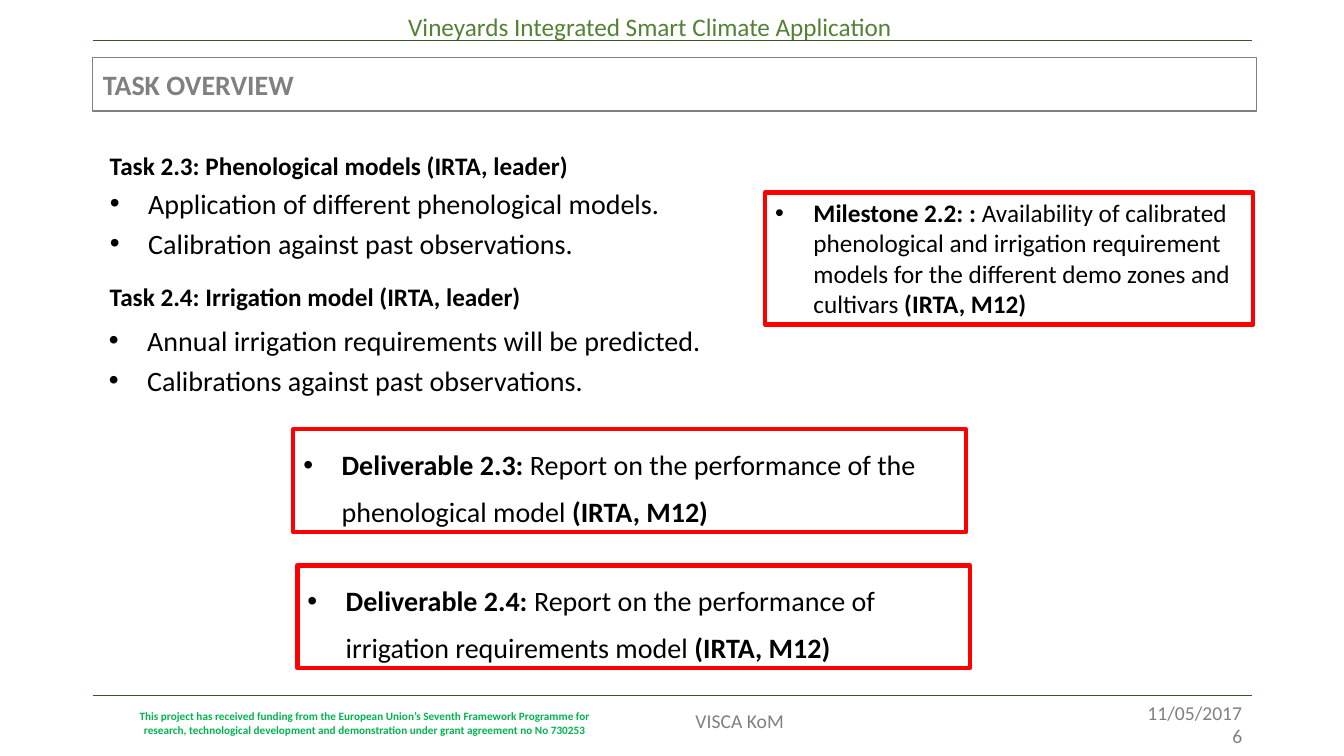
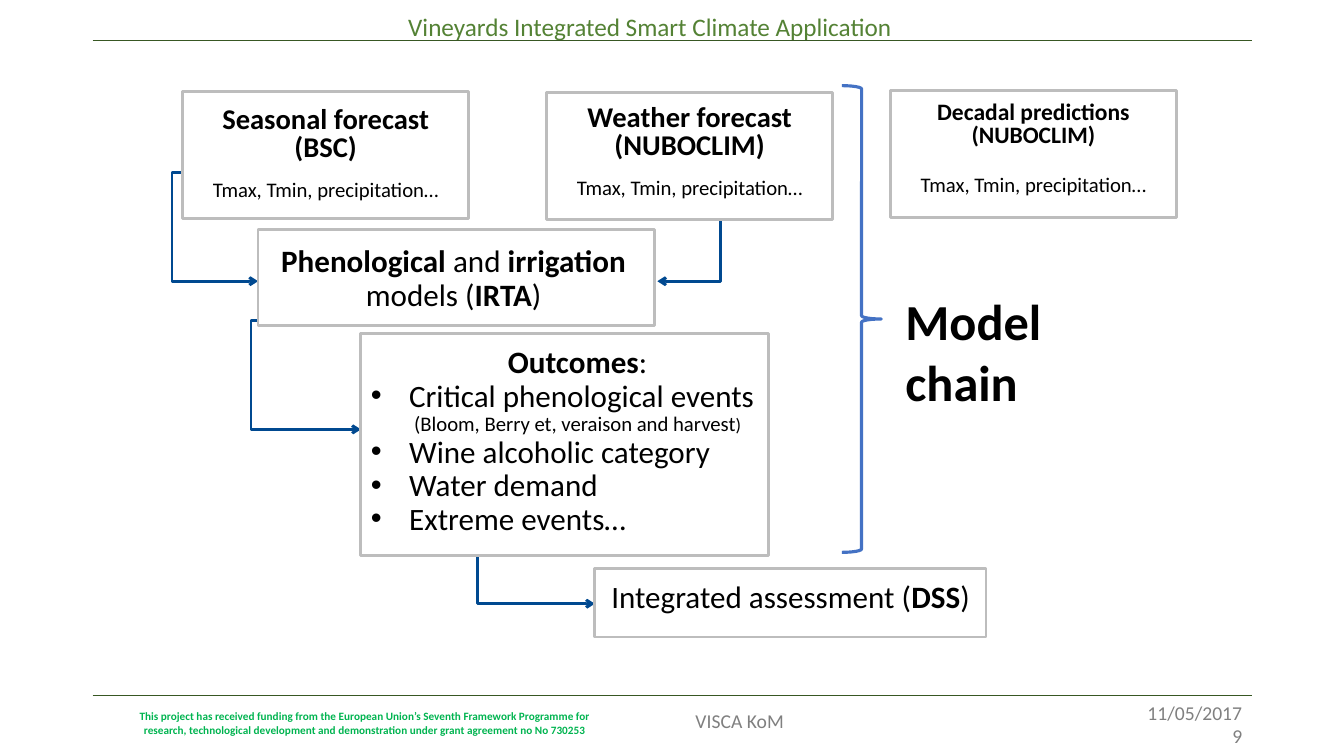
from dataclasses import dataclass
from typing import NamedTuple

from lxml import etree
from pptx import Presentation
from pptx.dml import color
from pptx.enum import shapes, text
from pptx.oxml import ns
from pptx.util import Inches, Pt

FONT = "Calibri"
BLACK, WHITE, GREY = "000000", "FFFFFF", "808080"
HEADER_GREEN, RULE_GREEN, FUNDING_GREEN = "548235", "385723", "00B450"
RED, BOX_GREY, ARROW_BLUE, BRACE_BLUE = "FF0000", "BDBDBD", "004990", "4472C4"
LEFT, CENTER, RIGHT = text.PP_ALIGN.LEFT, text.PP_ALIGN.CENTER, text.PP_ALIGN.RIGHT
TOP, MIDDLE = text.MSO_ANCHOR.TOP, text.MSO_ANCHOR.MIDDLE
HANGING = 0.38


class Area(NamedTuple):
    left: float
    top: float
    width: float
    height: float


class Insets(NamedTuple):
    left: float = 0.1
    top: float = 0.05
    right: float = 0.1
    bottom: float = 0.05


class Run(NamedTuple):
    words: str
    bold: bool = False
    size: float | None = None


@dataclass(frozen=True)
class Line:
    runs: tuple[Run, ...]
    size: float
    hex_color: str = BLACK
    align: text.PP_ALIGN = LEFT
    spacing: float = 1.0
    before: float = 0
    bullet: bool = False
    indent: float = 0


@dataclass(frozen=True)
class Box:
    area: Area
    lines: tuple[Line, ...]
    insets: Insets = Insets()


class Elbow(NamedTuple):
    begin: tuple[float, float]
    end: tuple[float, float]
    bend: float = 0.5


def rgb(hex_color: str) -> color.RGBColor:
    return color.RGBColor.from_string(hex_color)


def place(shape, area: Area) -> None:
    shape.left, shape.top, shape.width, shape.height = map(Inches, area)


def write(shape, lines: tuple[Line, ...], insets: Insets = Insets(), anchor=TOP) -> None:
    frame = shape.text_frame
    frame.word_wrap = True
    frame.auto_size = text.MSO_AUTO_SIZE.NONE
    frame.vertical_anchor = anchor
    frame.margin_left, frame.margin_top, frame.margin_right, frame.margin_bottom = map(Inches, insets)
    for index, line in enumerate(lines):
        paragraph = frame.add_paragraph() if index else frame.paragraphs[0]
        properties = paragraph._p.get_or_add_pPr()
        properties.set("marL", str(Inches(HANGING if line.bullet else line.indent)))
        properties.set("indent", str(-Inches(HANGING) if line.bullet else 0))
        if line.bullet:
            etree.SubElement(properties, ns.qn("a:buFont")).set("typeface", "Arial")
            etree.SubElement(properties, ns.qn("a:buChar")).set("char", "•")
        else:
            etree.SubElement(properties, ns.qn("a:buNone"))
        paragraph.alignment = line.align
        paragraph.line_spacing = line.spacing
        paragraph.space_before = Pt(line.before)
        for part in line.runs:
            run = paragraph.add_run()
            run.text = part.words
            run.font.name = FONT
            run.font.size = Pt(part.size or line.size)
            run.font.bold = part.bold
            run.font.color.rgb = rgb(line.hex_color)


def add_label(slide, area: Area, *lines: Line, insets: Insets = Insets()):
    label = slide.shapes.add_textbox(*map(Inches, area))
    write(label, lines, insets)
    return label


def add_box(slide, box: Box, outline: str, weight: float, fill: str | None = None) -> None:
    shape = slide.shapes.add_shape(shapes.MSO_SHAPE.RECTANGLE, *map(Inches, box.area))
    shape.shadow.inherit = False
    if fill:
        shape.fill.solid()
        shape.fill.fore_color.rgb = rgb(fill)
    else:
        shape.fill.background()
    shape.line.color.rgb = rgb(outline)
    shape.line.width = Pt(weight)
    write(shape, box.lines, box.insets)


def add_connector(slide, kind, begin, end, hex_color: str, weight: float):
    connector = slide.shapes.add_connector(kind, *map(Inches, (*begin, *end)))
    connector.line.color.rgb = rgb(hex_color)
    connector.line.width = Pt(weight)
    etree.SubElement(connector.element.spPr, ns.qn("a:effectLst"))
    return connector


def add_elbow_arrow(slide, elbow: Elbow) -> None:
    connector = add_connector(
        slide, shapes.MSO_CONNECTOR.ELBOW, elbow.begin, elbow.end, ARROW_BLUE, 2)
    properties = connector.element.spPr
    etree.SubElement(properties.find(ns.qn("a:ln")), ns.qn("a:tailEnd")).set("type", "arrow")
    geometry = properties.find(ns.qn("a:prstGeom"))
    guides = geometry.find(ns.qn("a:avLst"))
    if guides is None:
        guides = etree.SubElement(geometry, ns.qn("a:avLst"))
    guide = etree.SubElement(guides, ns.qn("a:gd"))
    guide.set("name", "adj1")
    guide.set("fmla", f"val {round(elbow.bend * 100000)}")


def furnish_master(presentation, slide) -> None:
    funding = (
        "This project has received funding from the European Union’s Seventh Framework Programme "
        "for research, technological development and demonstration under grant agreement no No 730253")
    furniture = [
        add_label(slide, Area(1.27, 6.98, 4.7, 0.34),
                  Line((Run(funding, True),), 8, FUNDING_GREEN, CENTER),
                  insets=Insets(0.11, 0.06, 0.11, 0.06)),
        add_label(slide, Area(6.8, 6.98, 1.2, 0.34), Line((Run("VISCA KoM"),), 14, GREY)),
        add_label(slide, Area(3.95, 0.06, 5.11, 0.4),
                  Line((Run("Vineyards Integrated Smart Climate Application"),), 18, HEADER_GREEN)),
    ]
    for height in (0.4, 6.9):
        furniture.append(add_connector(
            slide, shapes.MSO_CONNECTOR.STRAIGHT, (0.92, height), (12.42, height), RULE_GREEN, 0.5))
    for shape in furniture:
        presentation.slide_master.shapes.element.append(shape.element)


def add_page_mark(slide, number: int) -> None:
    add_label(slide, Area(10.67, 6.9, 1.75, 0.57),
              *(Line((Run(words),), 14, GREY, RIGHT) for words in ("11/05/2017", str(number))))


def report(area: Area, name: str, words: str, size: float, spacing: float) -> Box:
    runs = (Run(name, True), Run(words), Run("(IRTA, M12)", True))
    return Box(area, (Line(runs, size, spacing=spacing, bullet=True),))


def build_tasks(slide) -> None:
    title, *lists = slide.placeholders
    place(title, Area(0.92, 0.57, 11.54, 0.53))
    title.line.color.rgb = rgb(GREY)
    title.line.width = Pt(1)
    write(title, (Line((Run("TASK OVERVIEW", True),), 20, GREY),), anchor=MIDDLE)

    tasks = (
        ("Task 2.3: Phenological models (IRTA, leader)", 1.44, Area(0.99, 1.73, 6.5, 1),
         ("Application of different phenological models.", "Calibration against past observations.")),
        ("Task 2.4: Irrigation model (IRTA, leader)", 2.74, Area(0.98, 3.09, 6.5, 1),
         ("Annual irrigation requirements will be predicted.", "Calibrations against past observations.")),
    )
    for body, (heading, top, area, points) in zip(lists, tasks):
        add_label(slide, Area(0.99, top, 6.5, 0.4), Line((Run(heading, True),), 18))
        place(body, area)
        write(body, tuple(Line((Run(point),), 20, spacing=1.2, bullet=True) for point in points))

    for box in (
        report(Area(7.59, 1.91, 4.84, 1.31), "Milestone 2.2: : ",
               "Availability of calibrated phenological and irrigation requirement models "
               "for the different demo zones and cultivars ", 18, 1),
        report(Area(2.91, 4.26, 6.67, 1.02), "Deliverable 2.3: ",
               "Report on the performance of the phenological model ", 20, 1.4),
        report(Area(2.95, 5.61, 6.67, 1.02), "Deliverable 2.4: ",
               "Report on the performance of irrigation requirements model ", 20, 1.4),
    ):
        add_box(slide, box, RED, 3)


def forecast(left: float, top: float, name: str, owner: str, size: float,
             inset: float, gap: float) -> Box:
    heading = tuple(
        Line((Run(words, True),), size, align=CENTER, spacing=0.8) for words in (name, owner))
    variables = Line((Run("Tmax, Tmin, precipitation…"),), 14.8,
                     align=CENTER, spacing=0.9, before=gap)
    return Box(Area(left, top, 2.84, 1.26), (*heading, variables), Insets(top=inset))


def step(*runs: Run, **options) -> Line:
    return Line(runs, 22.2, spacing=0.9, **options)


def build_model_chain(slide) -> None:
    title = slide.shapes.title
    place(title, Area(8.88, 2.83, 2.1, 1.32))
    write(title, (Line((Run("Model chain", True),), 36),))

    for elbow in (
        Elbow((7.78, 1.98), (6.52, 2.79)),
        Elbow((3.58, 5.25), (5.9, 5.99)),
        Elbow((1.81, 1.71), (2.56, 2.79), -0.14),
        Elbow((2.56, 3.18), (3.58, 4.26), -0.07),
    ):
        add_elbow_arrow(slide, elbow)

    outcomes = (
        step(Run("Outcomes", True), Run(":"), align=CENTER, indent=0.21),
        step(Run("Critical phenological events"), bullet=True),
        step(Run("(Bloom, Berry et, veraison and harvest", size=14.8), Run(")", size=12.9),
             align=CENTER, indent=0.21),
        *(step(Run(words), bullet=True)
          for words in ("Wine alcoholic category", "Water demand", "Extreme events…")),
    )
    for box in (
        forecast(1.81, 0.91, "Seasonal forecast", "(BSC)", 20.4, 0.16, 12),
        forecast(5.42, 0.92, "Weather forecast", "(NUBOCLIM)", 20.4, 0.13, 12),
        forecast(8.83, 0.9, "Decadal predictions", "(NUBOCLIM)", 16.8, 0.12, 19),
        Box(Area(2.56, 2.28, 3.93, 0.95),
            (step(Run("Phenological", True), Run(" and "), Run("irrigation", True),
                  Run(" models ("), Run("IRTA", True), Run(")"), align=CENTER),),
            Insets(top=0.16, right=0.15)),
        Box(Area(3.58, 3.31, 4.04, 2.2), outcomes, Insets(top=0.13, right=0.05)),
        Box(Area(5.9, 5.64, 3.88, 0.68),
            (step(Run("Integrated assessment ("), Run("DSS", True), Run(")"), align=CENTER),),
            Insets(top=0.13)),
    ):
        add_box(slide, box, BOX_GREY, 2, WHITE)

    brace = slide.shapes.add_shape(
        shapes.MSO_SHAPE.RIGHT_BRACE, *map(Inches, Area(8.35, 0.85, 0.39, 4.63)))
    brace.shadow.inherit = False
    brace.fill.background()
    brace.line.color.rgb = rgb(BRACE_BLUE)
    brace.line.width = Pt(2.25)


def main() -> None:
    presentation = Presentation()
    presentation.slide_width, presentation.slide_height = Inches(13.33), Inches(7.5)
    two_content, title_only = presentation.slide_layouts[3], presentation.slide_layouts[5]
    tasks = presentation.slides.add_slide(two_content)
    furnish_master(presentation, tasks)
    build_tasks(tasks)
    add_page_mark(tasks, 6)
    model_chain = presentation.slides.add_slide(title_only)
    build_model_chain(model_chain)
    add_page_mark(model_chain, 9)
    presentation.save("out.pptx")


if __name__ == "__main__":
    main()
